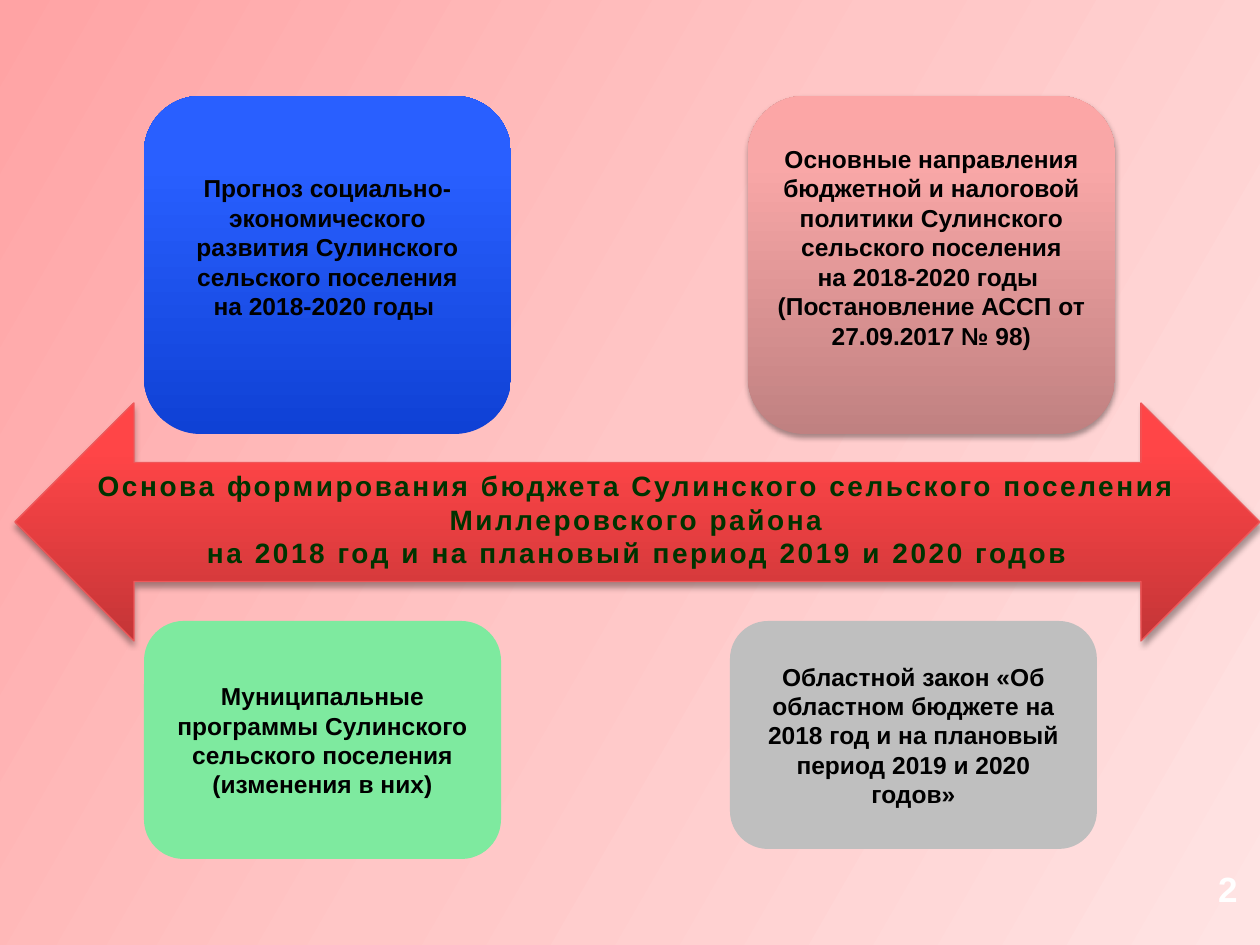
from dataclasses import dataclass
from typing import Optional, Union

from lxml.etree import SubElement as Sub
from pptx import Presentation
from pptx.dml.color import RGBColor as Rgb
from pptx.enum.shapes import MSO_SHAPE as Kind
from pptx.enum.text import MSO_ANCHOR as Anchor, PP_ALIGN as Align
from pptx.oxml.ns import qn
from pptx.util import Emu, Pt

SCALE = 914400 / 126  # EMU in one px


def px(n: int) -> Emu:
    return Emu(round(n * SCALE))


@dataclass(frozen=True)
class Grad:
    stops: tuple[tuple[int, str], ...]  # percent, colour
    angle: int  # clockwise degrees


def rise(low: str, mid: str, top: str) -> Grad:
    """Gradient running from the bottom edge to the top."""
    return Grad(((0, low), (80, mid), (100, top)), 270)


@dataclass(frozen=True)
class Theme:
    font: str = "Arial"
    back: Grad = Grad(((0, "FFA3A4"), (50, "FFC6C6"), (100, "FFE3E3")), 30)
    blue: Grad = rise("0F41D5", "295FFF", "2B60FF")
    pink: Grad = rise("C08181", "F9A7A7", "FCA6A6")
    red: Grad = rise("C43537", "FF4547", "FF4649")
    edge: str = "EF5759"
    green: str = "7EEA9F"
    gray: str = "BFBFBF"
    ink: str = "000000"
    title: str = "003300"
    white: str = "FFFFFF"
    small: int = 14
    large: int = 16
    page: int = 20


T = Theme()


@dataclass(frozen=True)
class Block:
    left: int
    top: int
    width: int
    height: int
    fill: Union[str, Grad]
    lines: tuple[str, ...]
    kind: Kind = Kind.ROUNDED_RECTANGLE
    edge: Optional[str] = None
    shade: bool = False
    foot: int = 6  # bottom inset
    anchor: Anchor = Anchor.MIDDLE
    size: int = T.small
    color: str = T.ink
    track: float = 0


# Fills and effects
def blend(fill, root, grad: Grad) -> None:
    fill.gradient()
    fill.gradient_angle = (360 - grad.angle) % 360
    stops = next(root.iter(qn("a:gsLst")))
    for old in list(stops):
        stops.remove(old)
    for pos, color in grad.stops:
        stop = Sub(stops, qn("a:gs"), pos=str(pos * 1000))
        Sub(stop, qn("a:srgbClr"), val=color)


def cast(shape) -> None:
    """Put a soft shadow just below the shape."""
    effects = next(shape._element.iter(qn("a:effectLst")))
    outer = Sub(effects, qn("a:outerShdw"), blurRad=str(Pt(3.1)),
                dist=str(Pt(1.8)), dir="5400000", rotWithShape="0")
    color = Sub(outer, qn("a:srgbClr"), val="000000")
    Sub(color, qn("a:alpha"), val="35000")


# Text
def write(shape, lines: tuple[str, ...], *, size: int, color: str,
          align: Align = Align.CENTER, anchor: Anchor = Anchor.MIDDLE,
          foot: int = 6, track: float = 0) -> None:
    frame = shape.text_frame
    frame.word_wrap = True
    frame.vertical_anchor = anchor
    frame.margin_bottom = px(foot)
    frame.text = "\n".join(lines)
    for para in frame.paragraphs:
        para.alignment = align
        for run in para.runs:
            font = run.font
            font.name, font.size, font.bold = T.font, Pt(size), True
            font.color.rgb = Rgb.from_string(color)
            if track:
                run._r.get_or_add_rPr().set("spc", str(round(track * 100)))


# Shapes
def draw(slide, b: Block) -> None:
    shape = slide.shapes.add_shape(
        b.kind, px(b.left), px(b.top), px(b.width), px(b.height))
    if isinstance(b.fill, Grad):
        blend(shape.fill, shape._element, b.fill)
    else:
        shape.fill.solid()
        shape.fill.fore_color.rgb = Rgb.from_string(b.fill)
    if b.edge:
        shape.line.color.rgb = Rgb.from_string(b.edge)
        shape.line.width = Pt(0.75)
    else:
        shape.line.fill.background()
    shape.shadow.inherit = False
    if b.shade:
        cast(shape)
    write(shape, b.lines, size=b.size, color=b.color, anchor=b.anchor,
          foot=b.foot, track=b.track)


BLOCKS = (
    Block(144, 96, 367, 338, T.blue, (
        "Прогноз социально-экономического развития Сулинского "
        "сельского поселения",
        "на 2018-2020 годы "), foot=42),
    Block(748, 96, 367, 338, T.pink, (
        "Основные направления бюджетной и налоговой политики "
        "Сулинского сельского поселения",
        "на 2018-2020 годы ",
        "(Постановление АССП от 27.09.2017 № 98)"), shade=True, foot=42),
    Block(144, 621, 357, 238, T.green, (
        "Муниципальные программы Сулинского сельского поселения",
        "(изменения в них)")),
    Block(730, 621, 367, 228, T.gray, (
        "Областной закон «Об областном бюджете на 2018 год и на "
        "плановый период 2019 и 2020 годов»",)),
    Block(15, 403, 1245, 238, T.red, (
        "Основа формирования бюджета Сулинского сельского поселения "
        "Миллеровского района\v"
        "на 2018 год и на плановый период 2019 и 2020 годов",),
        kind=Kind.LEFT_RIGHT_ARROW, edge=T.edge, shade=True,
        anchor=Anchor.TOP, size=T.large, color=T.title, track=1.5),
)


def main() -> None:
    deck = Presentation()
    deck.slide_width, deck.slide_height = px(1260), px(945)
    slide = deck.slides.add_slide(deck.slide_layouts[6])
    blend(slide.background.fill, slide._element, T.back)

    for block in BLOCKS:
        draw(slide, block)

    # Page number
    page = slide.shapes.add_textbox(px(1100), px(865), px(150), px(46))
    write(page, ("2",), size=T.page, color=T.white, align=Align.RIGHT)

    deck.save("out.pptx")


if __name__ == "__main__":
    main()
